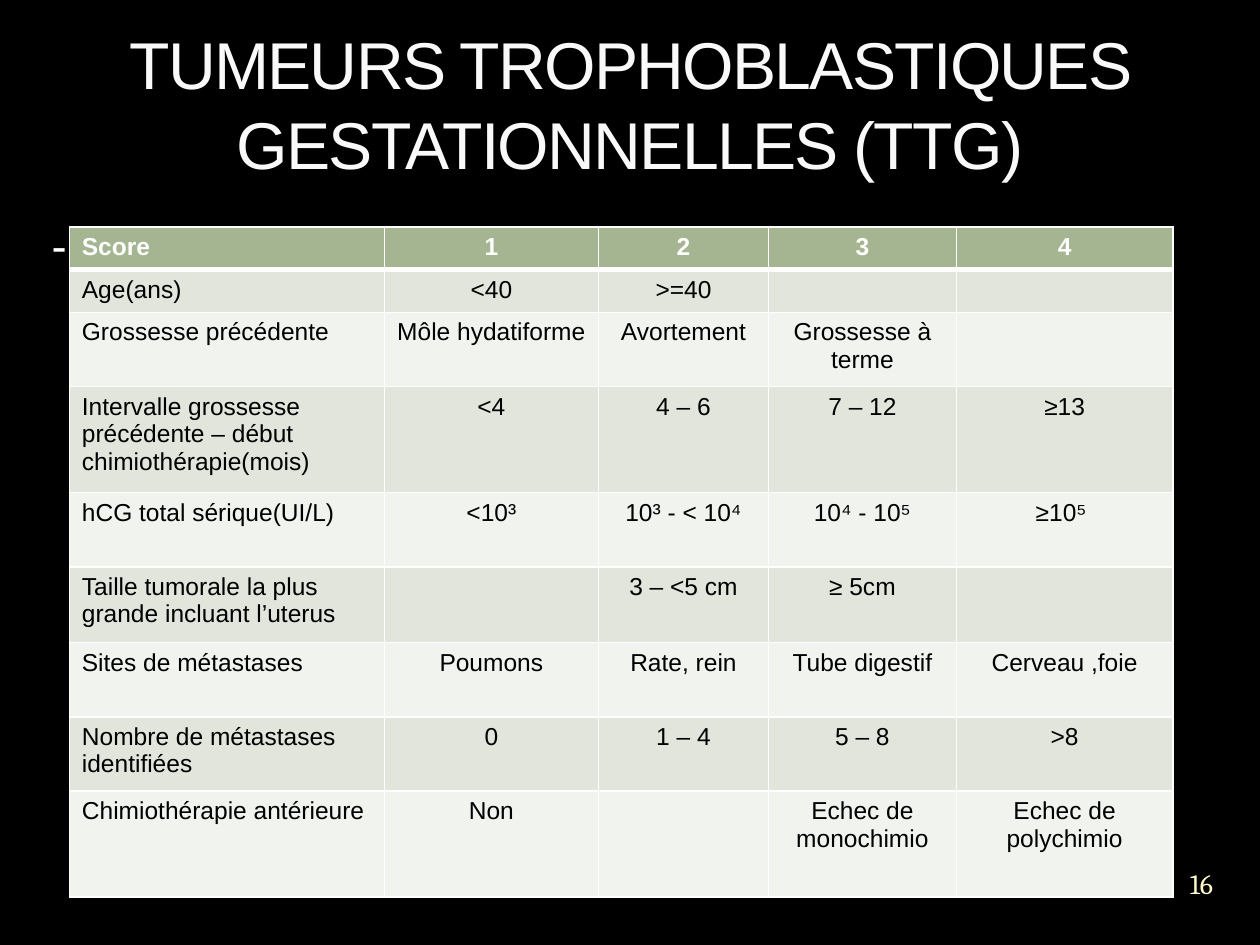
from dataclasses import dataclass

from lxml.etree import SubElement
from pptx import Presentation
from pptx.dml.color import RGBColor as Rgb
from pptx.enum.text import MSO_ANCHOR as Anchor, MSO_AUTO_SIZE as AutoSize, PP_ALIGN as Align
from pptx.oxml.ns import qn
from pptx.util import Inches, Pt

COLORS = {
    "background": "000000",
    "title": "F9F9F9",
    "title_outline": "3C4422",
    "white": "FFFFFF",
    "black": "000000",
    "number": "FEFAC9",
    "header": "A5B592",
    "odd": "E1E5DC",
    "even": "F0F3EE",
}
COLUMN_WIDTHS = (2.5, 1.7, 1.35, 1.49, 1.72)


@dataclass
class ScoreRow:
    height: float
    criterion: str
    scores: tuple[str, str, str, str]


SCORE_ROWS = [
    ScoreRow(0.34, "Score", ("1", "2", "3", "4")),
    ScoreRow(0.34, "Age(ans)", ("<40", ">=40", "", "")),
    ScoreRow(0.59, "Grossesse précédente", ("Môle hydatiforme", "Avortement", "Grossesse à terme", "")),
    ScoreRow(0.84, "Intervalle grossesse précédente – début chimiothérapie(mois)",
             ("<4", "4 – 6", "7 – 12", "≥13")),
    ScoreRow(0.59, "hCG total sérique(UI/L)", ("<10³", "10³ - < 10⁴", "10⁴ - 10⁵", "≥10⁵ ")),
    ScoreRow(0.6, "Taille tumorale la plus grande incluant l’uterus", ("", "3 – <5 cm", "≥ 5cm", "")),
    ScoreRow(0.59, "Sites de métastases", ("Poumons", "Rate, rein", "Tube digestif", "Cerveau ,foie")),
    ScoreRow(0.59, "Nombre de métastases identifiées", ("0", "1 – 4", "5 – 8", ">8")),
    ScoreRow(0.84, "Chimiothérapie antérieure", ("Non", "", "Echec de monochimio", "Echec de polychimio")),
]


def write(frame, text: str, *, size: float, color: str, font: str = "Arial",
          bold: bool = False, align=Align.LEFT):
    paragraph = frame.paragraphs[0]
    paragraph.alignment = align
    if not text:
        SubElement(paragraph._p, qn("a:endParaRPr"), sz=str(round(size * 100)))
        return paragraph
    run = paragraph.add_run()
    run.text = text
    run.font.size = Pt(size)
    run.font.name = font
    run.font.bold = bold
    run.font.color.rgb = Rgb.from_string(COLORS[color])
    return paragraph


def place(shape, left: float, top: float, width: float, height: float) -> None:
    shape.left, shape.top = Inches(left), Inches(top)
    shape.width, shape.height = Inches(width), Inches(height)


def add_line(parent, tag: str, points: float, color: str):
    line = parent.makeelement(qn(tag), {"w": str(Pt(points))})
    fill = SubElement(line, qn("a:solidFill"))
    return line, SubElement(fill, qn("a:srgbClr"), val=COLORS[color])


def draw_title(slide) -> None:
    title = slide.shapes.title
    place(title, 0.5, 0.17, 9, 1.33)
    frame = title.text_frame
    frame.auto_size = AutoSize.NONE
    frame.vertical_anchor = Anchor.BOTTOM
    heading = write(frame, "TUMEURS TROPHOBLASTIQUES GESTATIONNELLES (TTG)",
                    size=37.8, color="title", align=Align.CENTER)
    properties = heading.runs[0]._r.get_or_add_rPr()
    properties.set("spc", "-100")
    outline, tint = add_line(properties, "a:ln", 0.25, "title_outline")
    SubElement(tint, qn("a:alpha"), val="25000")
    properties.insert(0, outline)


def draw_body(slide) -> None:
    body = slide.placeholders[1]
    place(body, 0.31, 1.67, 9.19, 5.6)
    body.text_frame.auto_size = AutoSize.NONE
    dash = write(body.text_frame, "-", size=26, color="white", align=Align.JUSTIFY)
    dash.space_before = Pt(6)
    properties = dash._p.get_or_add_pPr()
    properties.set("marL", str(Inches(0.3)))
    properties.set("indent", str(Inches(-0.3)))
    SubElement(properties, qn("a:buNone"))


def draw_cell(cell, text: str, row: int, column: int) -> None:
    header = row == 0
    band = "header" if header else "odd" if row % 2 else "even"
    write(cell.text_frame, text, size=14, color="white" if header else "black",
          bold=header, align=Align.CENTER if column else Align.LEFT)
    properties = cell._tc.get_or_add_tcPr()
    for side in "LRTB":
        thick = (row, side) in ((0, "B"), (1, "T"))
        border, _ = add_line(properties, f"a:ln{side}", 3 if thick else 1, "white")
        properties.append(border)
    cell.fill.solid()
    cell.fill.fore_color.rgb = Rgb.from_string(COLORS[band])


def draw_scores(slide) -> None:
    table = slide.shapes.add_table(
        len(SCORE_ROWS), len(COLUMN_WIDTHS), Inches(0.55), Inches(1.8),
        Inches(sum(COLUMN_WIDTHS)), Inches(sum(row.height for row in SCORE_ROWS))).table
    for column, width in zip(table.columns, COLUMN_WIDTHS):
        column.width = Inches(width)
    for r, row in enumerate(SCORE_ROWS):
        table.rows[r].height = Inches(row.height)
        for c, text in enumerate((row.criterion, *row.scores)):
            draw_cell(table.cell(r, c), text, r, c)


def draw_page_number(slide) -> None:
    frame = slide.shapes.add_textbox(Inches(9.2), Inches(6.76), Inches(0.67), Inches(0.5)).text_frame
    frame.word_wrap = True
    frame.vertical_anchor = Anchor.MIDDLE
    frame.margin_left = frame.margin_right = frame.margin_top = frame.margin_bottom = 0
    write(frame, "16", size=16, color="number", font="Cambria", align=Align.CENTER)


def main() -> None:
    deck = Presentation()
    deck.slide_width, deck.slide_height = Inches(10), Inches(7.5)
    slide = deck.slides.add_slide(deck.slide_layouts[1])
    backdrop = slide.background.fill
    backdrop.solid()
    backdrop.fore_color.rgb = Rgb.from_string(COLORS["background"])
    draw_body(slide)
    draw_title(slide)
    draw_page_number(slide)
    draw_scores(slide)
    deck.save("out.pptx")


if __name__ == "__main__":
    main()
